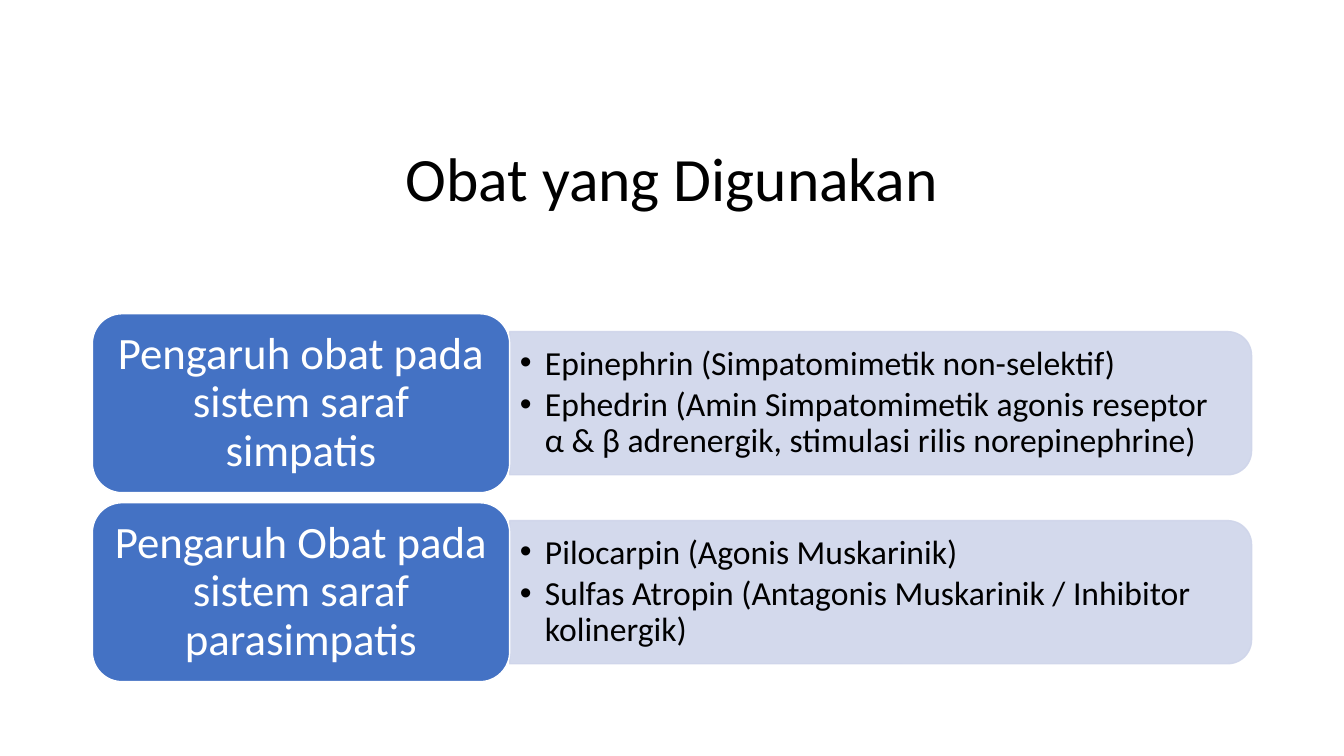
import pptx
import pptx.util
import pptx.dml.color
import pptx.enum.shapes
import pptx.enum.text
import pptx.oxml
import pptx.oxml.ns

Pt = pptx.util.Pt
RGB = pptx.dml.color.RGBColor
SHAPE = pptx.enum.shapes.MSO_SHAPE
ALIGN = pptx.enum.text.PP_ALIGN

BLACK = RGB(0x00, 0x00, 0x00)
WHITE = RGB(0xFF, 0xFF, 0xFF)
BLUE = RGB(0x44, 0x72, 0xC4)
PALE_BLUE = RGB(0xCF, 0xD5, 0xEA)

TITLE_FONT = dict(name="Calibri", size=Pt(44), color=BLACK)
LABEL_FONT = dict(name="Calibri", size=Pt(32), color=WHITE)
LIST_FONT = dict(name="Calibri", size=Pt(24), color=BLACK)

LEFT, WIDTH = 66, 828
ROW_TOP, ROW_HEIGHT, ROW_GAP = 224.1, 127.8, 7.2
LABEL_SHARE = 0.36
PANEL_SHARE = 0.8

ROWS = [
    ("Pengaruh obat pada sistem saraf simpatis",
     ["Epinephrin (Simpatomimetik non-selektif)",
      "Ephedrin (Amin Simpatomimetik agonis reseptor α & β adrenergik, "
      "stimulasi rilis norepinephrine)"]),
    ("Pengaruh Obat pada sistem saraf parasimpatis",
     ["Pilocarpin (Agonis Muskarinik)",
      "Sulfas Atropin (Antagonis Muskarinik / Inhibitor kolinergik)"]),
]


def place(sp, x, y, w, h):
    box = dict(left=x, top=y, width=w, height=h)
    for key, value in box.items():
        setattr(sp, key, Pt(value))


def write(tf, lines, font, align, after=0, bullet=False, margins=(7.2, 3.6)):
    across, down = margins
    frame = dict(word_wrap=True, auto_size=pptx.enum.text.MSO_AUTO_SIZE.NONE,
                 vertical_anchor=pptx.enum.text.MSO_ANCHOR.MIDDLE,
                 margin_left=Pt(across), margin_right=Pt(across),
                 margin_top=Pt(down), margin_bottom=Pt(down))
    for key, value in frame.items():
        setattr(tf, key, value)
    spacing = dict(alignment=align, line_spacing=0.9,
                   space_before=Pt(0), space_after=Pt(after))
    for i, line in enumerate(lines):
        p = tf.paragraphs[0] if i == 0 else tf.add_paragraph()
        if bullet:
            pPr = p._p.get_or_add_pPr()
            pPr.set("marL", str(Pt(18)))
            pPr.set("indent", str(Pt(-18)))
            pPr.append(pptx.oxml.parse_xml(
                '<a:buChar %s char="•"/>' % pptx.oxml.ns.nsdecls("a")))
        for key, value in spacing.items():
            setattr(p, key, value)
        r = p.add_run()
        r.text = line
        for key, value in font.items():
            if key == "color":
                r.font.color.rgb = value
            else:
                setattr(r.font, key, value)


def paint(sp, fill, line, opacity=100):
    sp.shadow.inherit = False
    sp.fill.solid()
    sp.fill.fore_color.rgb = fill
    sp.line.color.rgb = line
    sp.line.width = Pt(1)
    if opacity < 100:
        for clr in sp._element.spPr.iter(pptx.oxml.ns.qn("a:srgbClr")):
            clr.append(pptx.oxml.parse_xml('<a:alpha %s val="%d"/>' % (
                pptx.oxml.ns.nsdecls("a"), opacity * 1000)))


def add_title(s, x, y, w, h):
    sp = s.shapes.title
    place(sp, x, y, w, h)
    write(sp.text_frame, ["Obat yang Digunakan"], TITLE_FONT, ALIGN.CENTER)


def add_row(s, body, label, items, x, y, w, h):
    label_w = w * LABEL_SHARE
    panel_x, panel_w = x + label_w, w - label_w
    panel_h = h * PANEL_SHARE
    panel_y = y + (h - panel_h) / 2

    # Pale panel: a top-rounded shape turned to round its right side
    panel = s.shapes.add_shape(SHAPE.ROUND_2_SAME_RECTANGLE, 0, 0, 0, 0)
    place(panel, panel_x + (panel_w - panel_h) / 2,
          panel_y - (panel_w - panel_h) / 2, panel_h, panel_w)
    panel.rotation = 90
    paint(panel, PALE_BLUE, PALE_BLUE, opacity=90)

    # Drug list, in front of the panel
    body._element.addprevious(panel._element)
    place(body, panel_x, panel_y + 5, panel_w - 5, panel_h - 10)
    write(body.text_frame, items, LIST_FONT, ALIGN.LEFT, after=3.6, bullet=True)

    # Blue label
    sp = s.shapes.add_shape(SHAPE.ROUNDED_RECTANGLE, 0, 0, 0, 0)
    place(sp, x, y, label_w, h)
    paint(sp, BLUE, WHITE)
    write(sp.text_frame, [label], LABEL_FONT, ALIGN.CENTER, margins=(9.6, 4.8))


def main():
    prs = pptx.Presentation()
    prs.slide_width, prs.slide_height = Pt(960), Pt(540)
    s = prs.slides.add_slide(prs.slide_layouts.get_by_name("Two Content"))
    title, *bodies, = [sp for sp in s.placeholders]

    add_title(s, LEFT, 79.2, WIDTH, 100.8)
    for i, (body, (label, items)) in enumerate(zip(bodies, ROWS)):
        y = ROW_TOP + i * (ROW_HEIGHT + ROW_GAP)
        add_row(s, body, label, items, LEFT, y, WIDTH, ROW_HEIGHT)

    prs.save("out.pptx")


if __name__ == "__main__":
    main()
